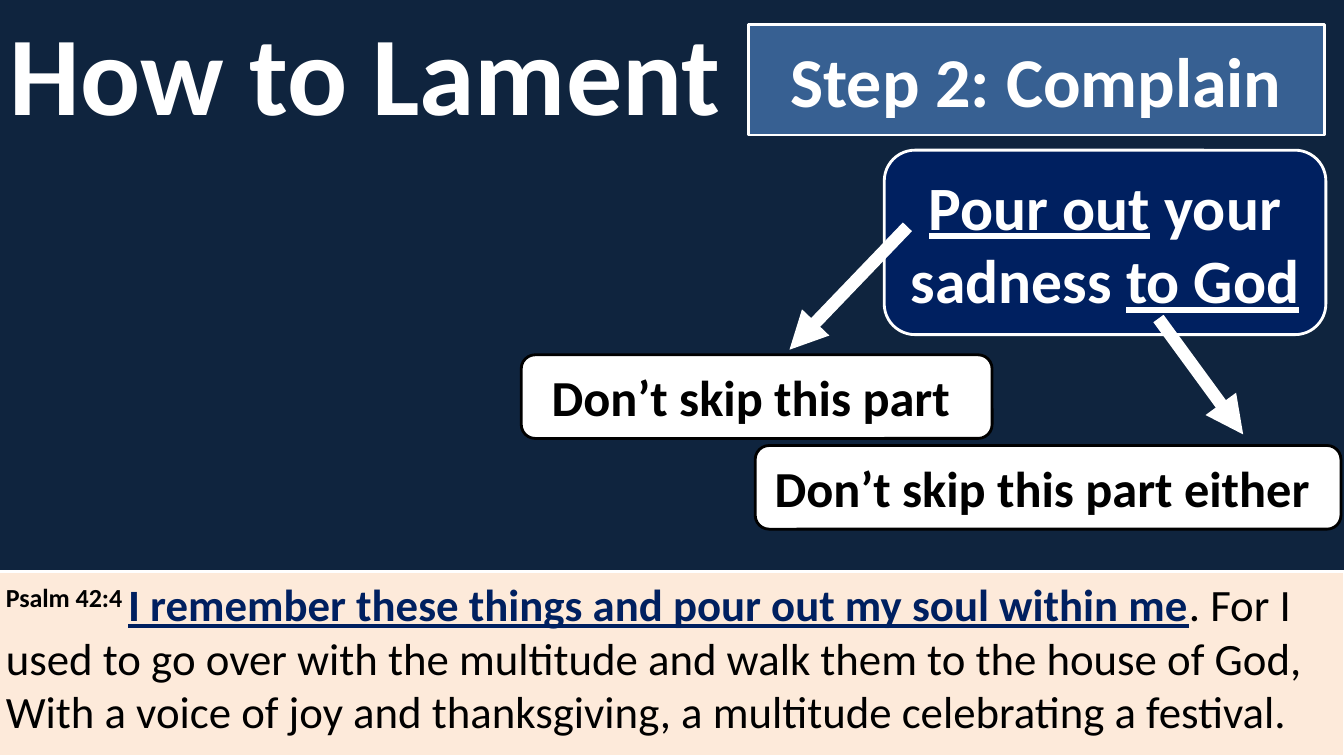
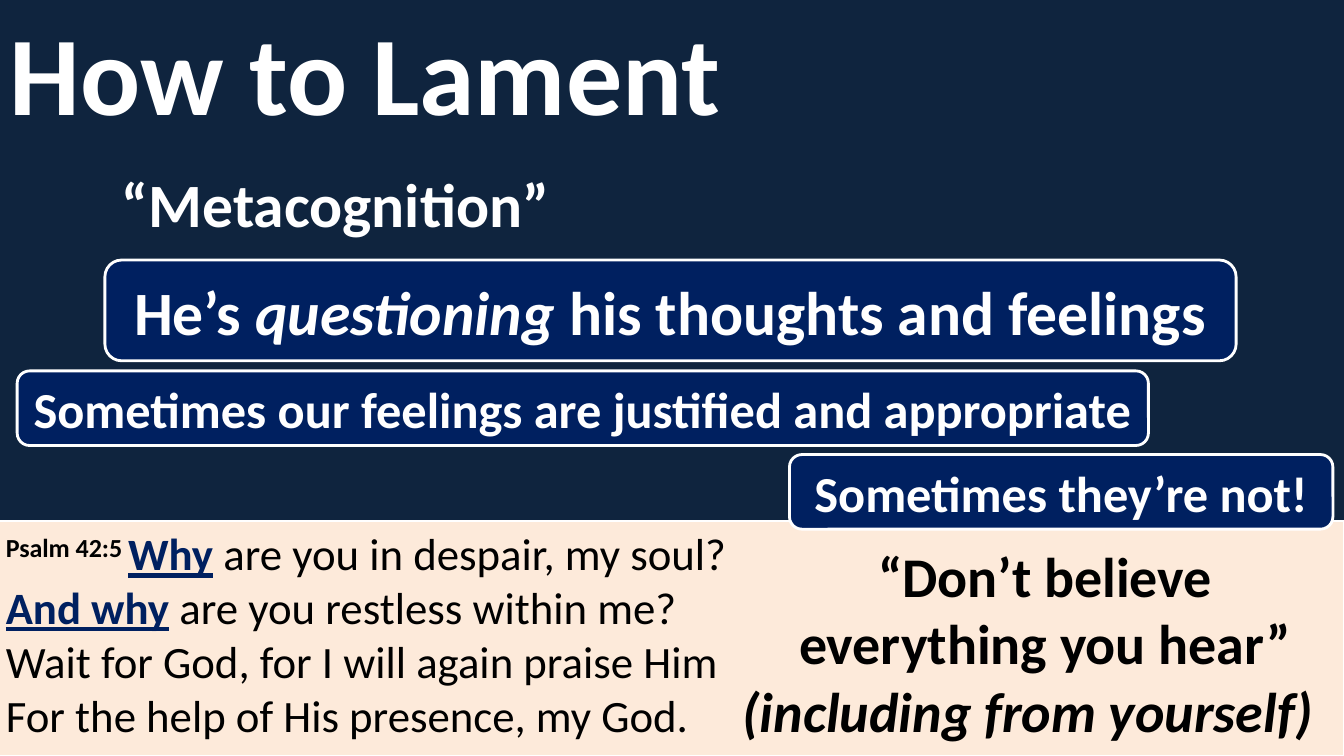
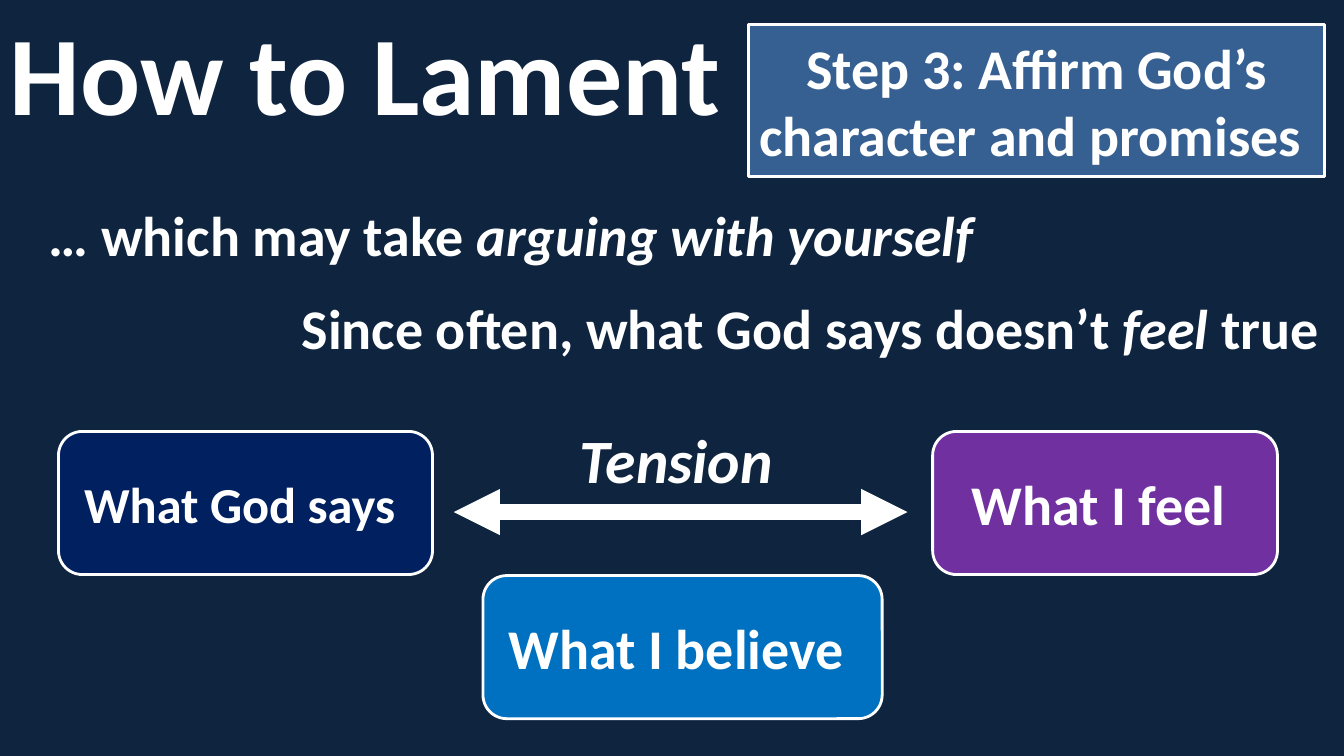
from pptx import Presentation
from pptx.dml.color import RGBColor
from pptx.enum.shapes import MSO_CONNECTOR, MSO_SHAPE
from pptx.enum.text import MSO_ANCHOR, PP_ALIGN
from pptx.oxml.ns import qn
from pptx.util import Inches, Pt
from lxml.etree import SubElement

FONT = "Calibri"
WIDTH, HEIGHT = 13.33, 7.5
WHITE, BLACK = "FFFFFF", "000000"
NIGHT, NAVY, STEEL = "0F243E", "002060", "376092"
BLUE, PURPLE, PEACH = "0070C0", "7030A0", "FDEADA"

TITLE = "How to Lament"
TITLE_AT = (0, 0.08, 7.67, 1.25)
STEP_LEFT, STEP_TOP, STEP_WIDTH = 7.42, 0.24, 5.72
BAND_LEFT = -0.04

# Box style: fill, line, text colour
STYLES = {
    "navy": (NAVY, WHITE, WHITE),
    "blue": (BLUE, WHITE, WHITE),
    "purple": (PURPLE, WHITE, WHITE),
    "white": (WHITE, BLACK, BLACK),
    "plain": (None, None, WHITE),
    "plain dark": (None, None, BLACK),
}

# Run format: differences from the text of its box
UNDER = {"underline": True}
ITALIC = {"italic": True}
REFERENCE = {"bold": True, "baseline": 30000}
KEY = {"bold": True, "underline": True, "color": NAVY}

# Step: text, size, height. Box: style, place, size, runs. Arrow: start, end, width, double.
SLIDES = [
    {
        "verse": (5.67, [
            ("Psalm 42:4 ", REFERENCE),
            ("I remember these things and pour out my soul within me", KEY),
            (". For I used to go over with the multitude and walk them to the house of God, "
             "With a voice of joy and thanksgiving, a multitude celebrating a festival.", {}),
        ]),
        "step": ("Step 2: Complain", 50, 1.1),
        "boxes": [
            ("navy", (8.77, 1.49, 4.38, 1.83), 44,
             [("Pour out", UNDER), (" your sadness ", {}), ("to God", UNDER)]),
            ("white", (5.17, 3.52, 4.67, 0.83), 36, [("Don’t skip this part ", {})]),
            ("white", (7.49, 4.42, 5.81, 0.83), 36, [("Don’t skip this part either ", {})]),
        ],
        "arrows": [((9, 2.25), (7.83, 3.47), 9, False),
                   ((11.49, 3.16), (12.33, 4.31), 9, False)],
    },
    {
        "verse": (5.17, [
            ("Psalm 42:5 ", REFERENCE),
            ("Why", KEY),
            (" are you in despair, my soul?\n", {}),
            ("And why", KEY),
            (" are you restless within me?\nWait for God, for I will again praise Him\n"
             "For the help of His presence, my God.", {}),
        ]),
        "boxes": [
            ("plain", (0.58, 1.56, 5.5, 0.9), 44, [("“Metacognition”", {})]),
            ("navy", (1.04, 2.58, 11.22, 1), 44,
             [("He’s ", {}), ("questioning", ITALIC), (" his thoughts and feelings", {})]),
            ("navy", (0.17, 3.68, 11.22, 0.74), 36,
             [("Sometimes our feelings are justified and appropriate", {})]),
            ("navy", (7.83, 4.51, 5.39, 0.74), 36, [("Sometimes they’re not!", {})]),
            ("plain dark", (7.67, 5.25, 5.39, 1.57), 40,
             [("“Don’t believe everything you hear”", {})]),
            ("plain dark", (6.92, 6.26, 6.55, 1.57), 40,
             [("(including from yourself)", ITALIC)]),
        ],
    },
    {
        "step": ("Step 3: Affirm God’s character and promises ", 40, 1.51),
        "boxes": [
            ("plain", (0.31, 1.83, 9.52, 0.99), 40,
             [("… which may take ", {}), ("arguing with yourself", ITALIC)]),
            ("plain", (2.73, 2.75, 10.61, 0.99), 40,
             [("Since often, what God says doesn’t ", {}), ("feel", ITALIC), (" true", {})]),
            ("purple", (9.25, 4.28, 3.42, 1.42), 40, [("What I feel ", {})]),
            ("navy", (0.58, 4.28, 3.71, 1.42), 36, [("What God says ", {})]),
            ("blue", (4.79, 5.71, 3.96, 1.42), 40, [("What I believe ", {})]),
            ("plain", (5, 4.26, 3.42, 0.59), 44, [("Tension", ITALIC)]),
        ],
        "arrows": [((4.5, 5.08), (9, 5.08), 11, True)],
    },
]


def rgb(color):
    return RGBColor.from_string(color)


def add_run(p, text, color, **formats):
    r = p.add_run()
    r.text = text
    baseline = formats.pop("baseline", None)
    if baseline:
        r._r.get_or_add_rPr().set("baseline", str(baseline))
    r.font.color.rgb = rgb(color)
    for name, value in formats.items():
        setattr(r.font, name, value)


def write(sp, runs, size, color, bold=True, align=PP_ALIGN.CENTER, anchor=MSO_ANCHOR.MIDDLE):
    """Fill a shape with one paragraph of runs; a newline becomes a line break."""
    tf = sp.text_frame
    tf.word_wrap = True
    tf.vertical_anchor = anchor
    p = tf.paragraphs[0]
    p.alignment = align
    base = {"name": FONT, "size": Pt(size), "bold": bold, "color": color}
    for text, changes in runs:
        for i, line in enumerate(text.split("\n")):
            if i:
                p.add_line_break()
            if line:
                add_run(p, line, **{**base, **changes})


def add_box(s, kind, at, fill, line, line_width=2):
    sp = s.shapes.add_shape(kind, *map(Inches, at))
    sp.shadow.inherit = False
    if fill:
        sp.fill.solid()
        sp.fill.fore_color.rgb = rgb(fill)
    else:
        sp.fill.background()
    if line:
        sp.line.color.rgb = rgb(line)
        sp.line.width = Pt(line_width)
    else:
        sp.line.fill.background()
    return sp


def add_title(s):
    sp = s.shapes.add_textbox(*map(Inches, TITLE_AT))
    write(sp, [(TITLE, {})], 80, WHITE, align=PP_ALIGN.LEFT)


def add_verse(s, top, runs):
    at = (BAND_LEFT, top, WIDTH - BAND_LEFT, HEIGHT - top)
    sp = add_box(s, MSO_SHAPE.RECTANGLE, at, PEACH, WHITE, 1.5)
    write(sp, runs, 32, BLACK, bold=False, align=PP_ALIGN.LEFT, anchor=MSO_ANCHOR.TOP)


def add_step(s, text, size, height):
    at = (STEP_LEFT, STEP_TOP, STEP_WIDTH, height)
    sp = add_box(s, MSO_SHAPE.RECTANGLE, at, STEEL, WHITE)
    write(sp, [(text, {})], size, WHITE)


def add_arrow(s, start, end, width, double):
    cn = s.shapes.add_connector(MSO_CONNECTOR.STRAIGHT, *map(Inches, start + end))
    cn.line.color.rgb = rgb(WHITE)
    cn.line.width = Pt(width)
    ln = cn.line._get_or_add_ln()
    for tag in ("a:headEnd", "a:tailEnd") if double else ("a:tailEnd",):
        SubElement(ln, qn(tag), type="triangle")
    SubElement(cn._element.spPr, qn("a:effectLst"))


def main():
    prs = Presentation()
    prs.slide_width, prs.slide_height = Inches(WIDTH), Inches(HEIGHT)
    background = prs.slide_master.background.fill
    background.solid()
    background.fore_color.rgb = rgb(NIGHT)
    for content in SLIDES:
        s = prs.slides.add_slide(prs.slide_layouts[6])
        add_title(s)
        if "verse" in content:
            add_verse(s, *content["verse"])
        if "step" in content:
            add_step(s, *content["step"])
        for style, at, size, runs in content["boxes"]:
            fill, line, color = STYLES[style]
            sp = add_box(s, MSO_SHAPE.ROUNDED_RECTANGLE, at, fill, line)
            write(sp, runs, size, color)
        for arrow in content.get("arrows", []):
            add_arrow(s, *arrow)
    prs.save("out.pptx")


if __name__ == "__main__":
    main()
